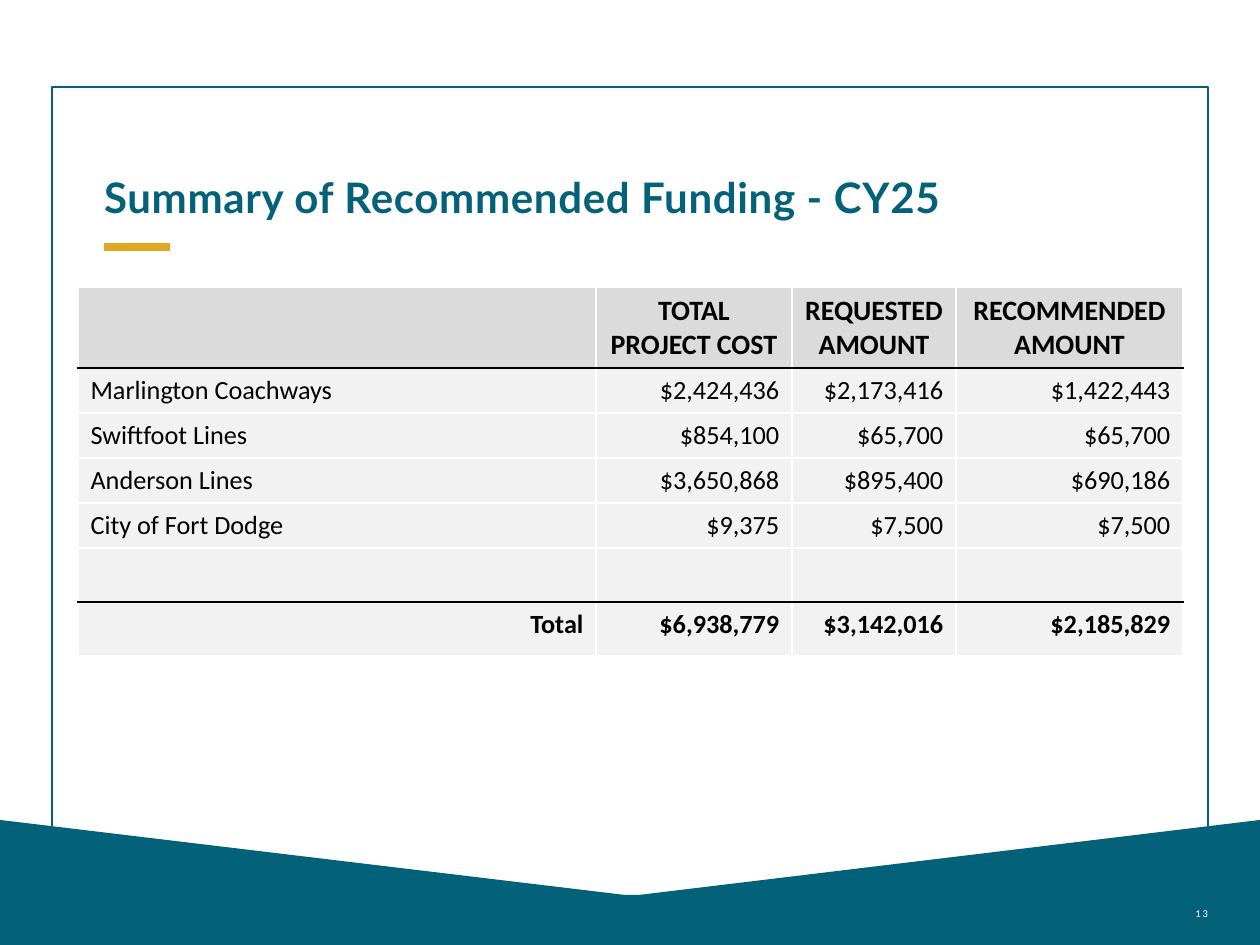
from lxml.etree import SubElement as Sub
from pptx import Presentation
from pptx.dml.color import RGBColor
from pptx.enum.shapes import MSO_CONNECTOR as Conn, MSO_SHAPE as Shape
from pptx.enum.text import MSO_ANCHOR as Anchor, MSO_AUTO_SIZE as Auto, PP_ALIGN as Align
from pptx.oxml.ns import qn
from pptx.util import Pt

TEAL = RGBColor(0x03, 0x61, 0x7A)
GOLD = RGBColor(0xE0, 0xA6, 0x24)
GREY = RGBColor(0xDB, 0xDB, 0xDC)
PALE = RGBColor(0xF2, 0xF2, 0xF2)
WHITE = RGBColor(0xFF, 0xFF, 0xFF)
BLACK = RGBColor(0, 0, 0)

TITLE = "Summary of Recommended Funding - CY25"
ROWS = [
    ("", "TOTAL PROJECT COST", "REQUESTED AMOUNT", "RECOMMENDED AMOUNT"),
    ("Marlington Coachways", "$2,424,436", "$2,173,416", "$1,422,443"),
    ("Swiftfoot Lines", "$854,100", "$65,700", "$65,700"),
    ("Anderson Lines", "$3,650,868", "$895,400", "$690,186"),
    ("City of Fort Dodge", "$9,375", "$7,500", "$7,500"),
    ("", "", "", ""),
    ("Total", "$6,938,779", "$3,142,016", "$2,185,829"),
]
WIDTHS = [518, 196, 164, 227]
HEIGHTS = [81, 45, 45, 45, 45, 54, 54]
BANNER = [(0, 820), (625, 895), (639, 895), (1260, 820), (1260, 945), (0, 945)]
RULES = {0, 5}
LAST = len(ROWS) - 1


def px(n):
    return round(n * 914400 / 126)


def box(*dims):
    return [px(n) for n in dims]


def write(frame, text, size, color=BLACK, font="Calibri", bold=False,
          align=Align.LEFT, track=0, space=None):
    para = frame.paragraphs[0]
    para.alignment = align
    para.line_spacing = space
    run = para.add_run()
    run.text = text
    face = run.font
    face.name, face.size, face.bold = font, Pt(size), bold
    face.color.rgb = color
    if track:
        run._r.get_or_add_rPr().set("spc", str(track))


def inset(frame, left, right):
    frame.margin_left, frame.margin_right = box(left, right)
    frame.margin_top = frame.margin_bottom = px(6)
    frame.word_wrap = True
    frame.auto_size = Auto.NONE


def edge(cell, side, color):
    line = Sub(cell._tc.get_or_add_tcPr(), qn("a:ln" + side), w=str(Pt(1)))
    Sub(Sub(line, qn("a:solidFill")), qn("a:srgbClr"), val=str(color))


def style(cell, row, col):
    head = row == 0
    edge(cell, "L", WHITE)
    edge(cell, "R", WHITE)
    edge(cell, "T", BLACK if row - 1 in RULES else WHITE)
    edge(cell, "B", BLACK if row in RULES else WHITE)
    cell.fill.solid()
    cell.fill.fore_color.rgb = GREY if head else PALE
    text = ROWS[row][col]
    if text:
        align = (Align.CENTER if head else
                 Align.LEFT if col == 0 and row < LAST else Align.RIGHT)
        write(cell.text_frame, text, 16 if head else 15,
              bold=head or row == LAST, align=align)


deck = Presentation()
deck.slide_width, deck.slide_height = box(1260, 945)
slide = deck.slides.add_slide(deck.slide_layouts[5])
shapes = slide.shapes

path = shapes.build_freeform(*BANNER[0], scale=px(1))
path.add_line_segments(BANNER[1:], close=True)
banner = path.convert_to_shape()
banner.shadow.inherit = False
banner.fill.solid()
banner.fill.fore_color.rgb = TEAL
banner.line.fill.background()

frame = shapes.add_shape(Shape.RECTANGLE, *box(52, 87, 1156, 839))
frame.shadow.inherit = False
frame.fill.background()
frame.line.color.rgb = TEAL
frame.line.width = Pt(1)

number = shapes.add_textbox(*box(1086, 876, 122, 50)).text_frame
inset(number, 0, 0)
number.vertical_anchor = Anchor.BOTTOM
write(number, "13", 6, WHITE, align=Align.RIGHT, track=110)

title = shapes.title
title.left, title.top, title.width, title.height = box(104, 171, 1052, 65)
inset(title.text_frame, 0, 13)
title.text_frame.vertical_anchor = Anchor.TOP
write(title.text_frame, TITLE, 24, TEAL, font="Lato", bold=True,
      track=40, space=0.9)

dash = shapes.add_connector(Conn.STRAIGHT, *box(104, 247, 170, 247))
dash.line.color.rgb = GOLD
dash.line.width = Pt(4.5)
Sub(dash._element.spPr, qn("a:effectLst"))

table = shapes.add_table(len(ROWS), len(WIDTHS),
                         *box(78, 287, sum(WIDTHS), sum(HEIGHTS))).table
for col, wide in zip(table.columns, WIDTHS):
    col.width = px(wide)
for row, high in zip(table.rows, HEIGHTS):
    row.height = px(high)
for row in range(len(ROWS)):
    for col in range(len(WIDTHS)):
        style(table.cell(row, col), row, col)

deck.save("out.pptx")
